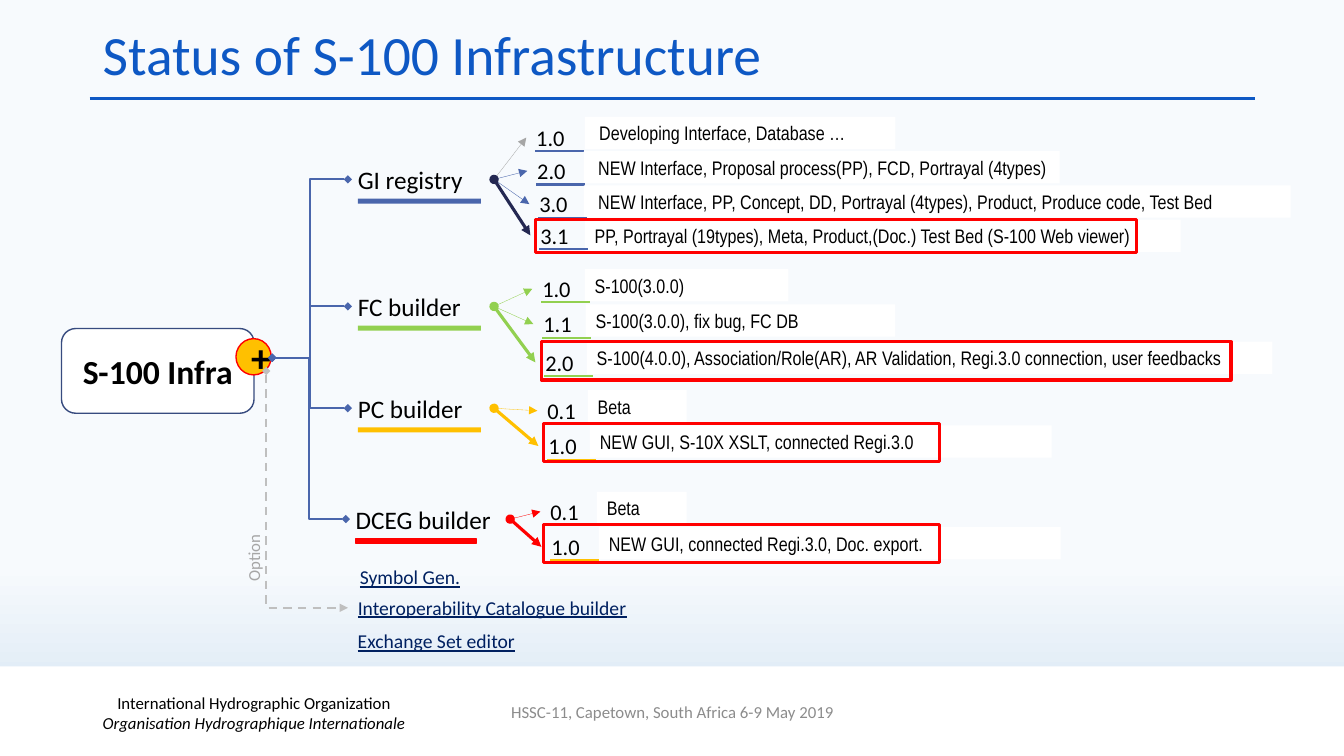
from dataclasses import dataclass
from typing import Optional

import lxml.etree
import pptx
import pptx.dml.color
import pptx.enum.dml
import pptx.enum.shapes
import pptx.enum.text
import pptx.oxml.ns
import pptx.shapes.autoshape
import pptx.shapes.connector
import pptx.util

Inches = pptx.util.Inches
Pt = pptx.util.Pt
RGBColor = pptx.dml.color.RGBColor
Shape = pptx.shapes.autoshape.Shape
Connector = pptx.shapes.connector.Connector
Preset = pptx.enum.shapes.MSO_SHAPE
ConnectorType = pptx.enum.shapes.MSO_CONNECTOR
Dash = pptx.enum.dml.MSO_LINE
Align = pptx.enum.text.PP_ALIGN
Anchor = pptx.enum.text.MSO_ANCHOR
AutoSize = pptx.enum.text.MSO_AUTO_SIZE
qn = pptx.oxml.ns.qn

BLACK = RGBColor(0x00, 0x00, 0x00)
WHITE = RGBColor(0xFF, 0xFF, 0xFF)
RED = RGBColor(0xFF, 0x00, 0x00)
AMBER = RGBColor(0xFF, 0xC0, 0x00)
GREEN = RGBColor(0x92, 0xD0, 0x50)
BLUE = RGBColor(0x4A, 0x66, 0xAC)
DARK_BLUE = RGBColor(0x24, 0x28, 0x52)
OUTLINE_BLUE = RGBColor(0x37, 0x4B, 0x7F)
TITLE_BLUE = RGBColor(0x0E, 0x58, 0xC4)
NAVY = RGBColor(0x00, 0x20, 0x60)
GREY = RGBColor(0xA6, 0xA6, 0xA6)
LIGHT_GREY = RGBColor(0xBF, 0xBF, 0xBF)
FOOTER_GREY = RGBColor(0x8C, 0x8C, 0x8C)
SKY_TOP = RGBColor(0xF7, 0xFA, 0xFD)
SKY_BOTTOM = RGBColor(0xD0, 0xE2, 0xF1)

Box = tuple[float, float, float, float]


@dataclass
class Version:
    number: str
    left: float
    top: float
    label: str
    label_box: Box
    arrow_color: Optional[RGBColor] = None
    dashed: bool = False
    latest: bool = False


@dataclass
class Topic:
    name: str
    box: Box
    bar_width: float
    color: RGBColor
    rule_color: RGBColor
    versions: list[Version]


TOPICS = [
    Topic("GI registry", (3.45, 1.58, 1.45, 0.4), 1.22, BLUE, BLUE, [
        Version("1.0", 5.22, 1.18, " Developing Interface, Database …",
                (5.8, 1.16, 3.08, 0.32), GREY, dashed=True),
        Version("2.0", 5.23, 1.51, " NEW Interface, Proposal process(PP), FCD, Portrayal (4types)",
                (5.79, 1.5, 4.72, 0.32)),
        Version("3.0", 5.25, 1.84, " NEW Interface, PP, Concept, DD, Portrayal (4types), "
                "Product, Produce code, Test Bed", (5.79, 1.84, 7.01, 0.32)),
        Version("3.1", 5.26, 2.15, "PP, Portrayal (19types), Meta, Product,(Doc.) "
                "Test Bed (S-100 Web viewer)", (5.8, 2.18, 5.91, 0.32), DARK_BLUE, latest=True),
    ]),
    Topic("FC builder", (3.45, 2.84, 1.45, 0.4), 1.22, GREEN, GREEN, [
        Version("1.0", 5.28, 2.68, "S-100(3.0.0)", (5.8, 2.67, 2.02, 0.32), dashed=True),
        Version("1.1", 5.29, 3.03, "S-100(3.0.0), fix bug, FC DB", (5.81, 3.02, 3.07, 0.32)),
        Version("2.0", 5.31, 3.41, "S-100(4.0.0), Association/Role(AR), AR Validation, "
                "Regi.3.0 connection, user feedbacks", (5.82, 3.39, 6.8, 0.32), latest=True),
    ]),
    Topic("PC builder", (3.45, 3.85, 1.45, 0.4), 1.22, AMBER, AMBER, [
        Version("0.1", 5.33, 3.89, "Beta", (5.83, 3.87, 0.98, 0.32), dashed=True),
        Version("1.0", 5.34, 4.24, "NEW GUI, S-10X XSLT, connected Regi.3.0",
                (5.85, 4.22, 4.58, 0.32), latest=True),
    ]),
    Topic("DCEG builder", (3.43, 4.95, 1.63, 0.4), 1.19, RED, AMBER, [
        Version("0.1", 5.36, 4.89, "Beta", (5.92, 4.88, 0.89, 0.32), dashed=True),
        Version("1.0", 5.37, 5.24, "NEW GUI, connected Regi.3.0, Doc. export.",
                (5.94, 5.23, 4.58, 0.32), latest=True),
    ]),
]
OPTIONS: list[tuple[str, Box]] = [
    ("Symbol Gen.", (3.47, 5.56, 1.63, 0.34)),
    ("Interoperability Catalogue builder", (3.45, 5.86, 4.29, 0.34)),
    ("Exchange Set editor", (3.45, 6.19, 2.5, 0.34)),
]
HIGHLIGHTS: list[Box] = [
    (5.31, 2.18, 5.96, 0.33), (5.37, 3.39, 6.84, 0.38),
    (5.39, 4.2, 3.93, 0.38), (5.39, 5.2, 3.93, 0.38),
]
HUB = (2.7, 3.55)

presentation = pptx.Presentation()
presentation.slide_width, presentation.slide_height = Inches(13.33), Inches(7.5)
slide = presentation.slides.add_slide(presentation.slide_layouts[6])


def add_run(shape: Shape, text: str, size: float, color: RGBColor = BLACK, font: str = "Calibri",
            bold: bool = False, italic: bool = False, underline: bool = False) -> None:
    run = shape.text_frame.paragraphs[0].add_run()
    run.text = text
    run.font.name, run.font.size = font, Pt(size)
    run.font.bold, run.font.italic, run.font.underline = bold, italic, underline
    run.font.color.rgb = color


def add_box(preset: Preset, box: Box, fill: Optional[RGBColor] = None,
            line: Optional[RGBColor] = None, width: float = 1, align: Align = Align.LEFT) -> Shape:
    shape = slide.shapes.add_shape(preset, *map(Inches, box))
    shape.shadow.inherit = False
    if fill is None:
        shape.fill.background()
    else:
        shape.fill.solid()
        shape.fill.fore_color.rgb = fill
    if line is None:
        shape.line.fill.background()
    else:
        shape.line.color.rgb = line
        shape.line.width = Pt(width)
    shape.text_frame.vertical_anchor = Anchor.MIDDLE
    shape.text_frame.paragraphs[0].alignment = align
    return shape


def add_text(box: Box, wrap: bool = True, grow: bool = True, align: Align = Align.LEFT) -> Shape:
    shape = slide.shapes.add_textbox(*map(Inches, box))
    frame = shape.text_frame
    frame.word_wrap = wrap
    frame.auto_size = AutoSize.SHAPE_TO_FIT_TEXT if grow else AutoSize.NONE
    frame.vertical_anchor = Anchor.TOP if grow else Anchor.MIDDLE
    frame.paragraphs[0].alignment = align
    return shape


def add_line(start: tuple[float, float], end: tuple[float, float], color: RGBColor, width: float,
             kind: ConnectorType = ConnectorType.STRAIGHT, head: str = "", tail: str = "",
             dash: Optional[Dash] = None) -> Connector:
    connector = slide.shapes.add_connector(kind, *map(Inches, start + end))
    connector.line.color.rgb = color
    connector.line.width = Pt(width)
    if dash is not None:
        connector.line.dash_style = dash
    properties = connector._element.spPr
    outline = properties.find(qn("a:ln"))
    for tag, arrow in (("a:headEnd", head), ("a:tailEnd", tail)):
        if arrow:
            lxml.etree.SubElement(outline, qn(tag)).set("type", arrow)
    lxml.etree.SubElement(properties, qn("a:effectLst"))
    return connector


def add_version(version: Version, topic: Topic, topic_box: Shape) -> None:
    label = add_box(Preset.RECTANGLE, version.label_box, WHITE)
    add_run(label, version.label, 14, font="Arial Narrow")
    rule_left, rule_top = version.left + 0.09, version.top + 0.32
    add_line((rule_left, rule_top), (rule_left + 0.48, rule_top), topic.rule_color, 1.5)
    number = add_text((version.left, version.top, 0.49, 0.37), wrap=False)
    add_run(number, version.number, 16)
    arrow = add_line((4.9, version.top), (version.left, version.top),
                     version.arrow_color or topic.color, 2.25 if version.latest else 0.25,
                     head="oval", tail="triangle", dash=Dash.SQUARE_DOT if version.dashed else None)
    arrow.begin_connect(topic_box, 3)
    arrow.end_connect(number, 1)


def add_topic(topic: Topic) -> None:
    left, top, _, height = topic.box
    add_box(Preset.RECTANGLE, (left + 0.1, top + 0.39, topic.bar_width, 0.05), topic.color,
            RED if topic.color == RED else None)
    topic_box = add_text(topic.box)
    add_run(topic_box, topic.name, 18)
    branch = add_line(HUB, (left, top + height / 2), BLUE, 1.5, ConnectorType.ELBOW,
                      head="diamond", tail="diamond")
    branch.end_connect(topic_box, 1)
    for version in topic.versions:
        add_version(version, topic, topic_box)


# Background, title and footer
background = slide.background.fill
background.gradient()
background.gradient_angle = 270
for stop, position, color in zip(background.gradient_stops, (0.75, 1), (SKY_TOP, SKY_BOTTOM)):
    stop.position = position
    stop.color.rgb = color
add_line((0.89, 0.98), (12.45, 0.98), TITLE_BLUE, 2.25)
add_box(Preset.RECTANGLE, (0, 6.61, 13.33, 0.89), WHITE)
organization = add_text((0.27, 6.87, 4.5, 0.4), grow=False, align=Align.CENTER)
add_run(organization, "International Hydrographic Organization", 12)
organization.text_frame.paragraphs[0].add_line_break()
add_run(organization, "Organisation Hydrographique Internationale", 12, italic=True)
title = add_text((0.92, 0.28, 11.5, 0.59), grow=False)
title.text_frame.paragraphs[0].line_spacing = 0.9
add_run(title, "Status of S-100 Infrastructure", 39.6, TITLE_BLUE)
footer = add_text((4.42, 6.86, 4.5, 0.4), grow=False, align=Align.CENTER)
add_run(footer, "HSSC-11, Capetown, South Africa 6-9 May 2019", 12, FOOTER_GREY)

# Root of the tree
root = add_box(Preset.ROUNDED_RECTANGLE, (0.61, 3.26, 1.91, 0.84), WHITE, OUTLINE_BLUE,
               align=Align.CENTER)
add_run(root, "S-100 Infra", 24, bold=True)
plus = add_box(Preset.OVAL, (2.34, 3.36, 0.35, 0.36), AMBER, RED, align=Align.CENTER)
add_run(plus, "+", 28, bold=True)

# Topics with their versions
for topic in TOPICS:
    add_topic(topic)

# Optional tools, reached by a dashed one-bend connector
for name, box in OPTIONS:
    add_run(add_text(box), name, 14, NAVY, underline=True)
option_line = add_line((4.22, 4.45), (1.87, 5.26), LIGHT_GREY, 1.5, ConnectorType.ELBOW,
                       head="diamond", tail="triangle", dash=Dash.DASH)
option_line._element.spPr.find(qn("a:xfrm")).set("rot", str(270 * 60000))
option_line._element.spPr.find(qn("a:prstGeom")).set("prst", "bentConnector2")
option = add_text((2.18, 5.38, 0.67, 0.3), wrap=False)
option.rotation = 270
add_run(option, "Option", 12, GREY)

# Frames around the latest versions
for frame_box in HIGHLIGHTS:
    add_box(Preset.RECTANGLE, frame_box, line=RED, width=2.25)

presentation.save("out.pptx")
